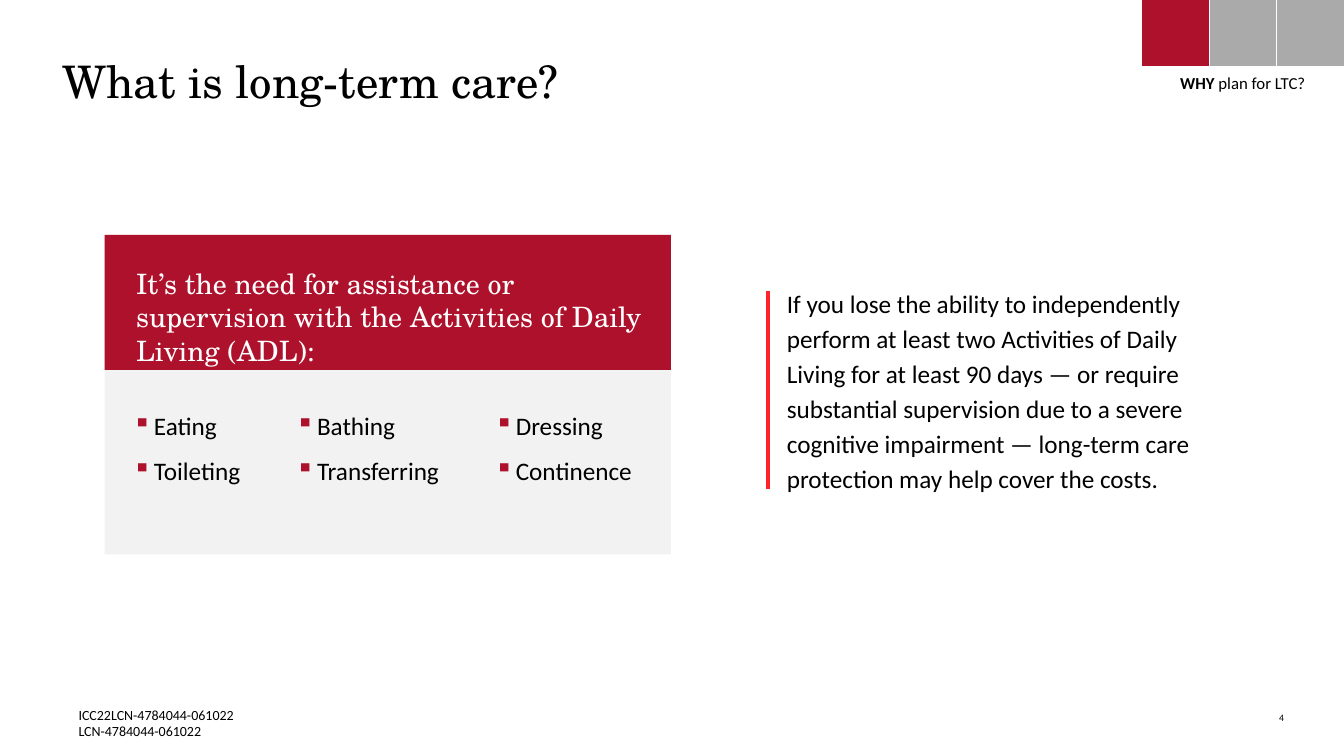
"""Builds the slide that explains what long-term care is."""
from dataclasses import dataclass

from lxml import etree
from pptx import Presentation
from pptx.dml.color import RGBColor
from pptx.enum.shapes import MSO_CONNECTOR, MSO_SHAPE
from pptx.enum.text import MSO_ANCHOR, PP_ALIGN
from pptx.oxml.ns import qn
from pptx.util import Cm, Pt

RECT = MSO_SHAPE.RECTANGLE
STRAIGHT = MSO_CONNECTOR.STRAIGHT
TOP, BOTTOM = MSO_ANCHOR.TOP, MSO_ANCHOR.BOTTOM
LEFT, CENTER, RIGHT = PP_ALIGN.LEFT, PP_ALIGN.CENTER, PP_ALIGN.RIGHT


@dataclass(frozen=True)
class Theme:
    serif: str = "TeX Gyre Schola"
    sans: str = "Calibri"
    black: str = "000000"
    white: str = "FFFFFF"
    crimson: str = "AD112B"
    red: str = "FF232A"
    grey: str = "AAAAAA"
    panel: str = "F2F2F2"
    title: int = 32
    heading: int = 20
    body: int = 18
    label: int = 12
    footer: int = 10
    number: int = 7


theme = Theme()
prs = Presentation()
prs.slide_width, prs.slide_height = Cm(33.87), Cm(19.05)
s = prs.slides.add_slide(prs.slide_layouts[6])


def add_text(text, box, size, font=theme.sans, color=theme.black, lead="",
             align=LEFT, anchor=TOP, spacing=None, inset=True, wrap=True, bullet=None):
    """Add a text box with one paragraph per line of text."""
    tf = s.shapes.add_textbox(*map(Cm, box)).text_frame
    tf.word_wrap = wrap
    tf.vertical_anchor = anchor
    if not inset:
        tf.margin_left = tf.margin_right = tf.margin_top = tf.margin_bottom = 0
    for i, line in enumerate(text.split("\n")):
        p = tf.add_paragraph() if i else tf.paragraphs[0]
        p.alignment = align
        if spacing:
            p.line_spacing = spacing
        if bullet:
            pPr = p._p.get_or_add_pPr()
            pPr.set("marL", str(Cm(0.53)))
            pPr.set("indent", str(-Cm(0.53)))
            clr = etree.SubElement(pPr, qn("a:buClr"))
            etree.SubElement(clr, qn("a:srgbClr"), val=theme.crimson)
            etree.SubElement(pPr, qn("a:buChar"), char=bullet)
        for part, bold in ((lead, True), (line, False)):
            if part:
                r = p.add_run()
                r.text = part
                r.font.name, r.font.size, r.font.bold = font, Pt(size), bold
                r.font.color.rgb = RGBColor.from_string(color)


def add_rect(box, fill, outline=None):
    """Add a flat rectangle, outlined only when a colour is given."""
    sp = s.shapes.add_shape(RECT, *map(Cm, box))
    sp.shadow.inherit = False
    sp.fill.solid()
    sp.fill.fore_color.rgb = RGBColor.from_string(fill)
    if outline:
        sp.line.color.rgb = RGBColor.from_string(outline)
        sp.line.width = Pt(0.25)
    else:
        sp.line.fill.background()


add_text("4", (31.52, 17.93, 0.84, 0.3), theme.number, align=RIGHT, anchor=BOTTOM, inset=False)
add_text("ICC22LCN-4784044-061022\nLCN-4784044-061022", (1.98, 17.78, 4.47, 0.86),
         theme.footer, anchor=BOTTOM, inset=False)
add_text("What is long-term care?", (1.57, 1.35, 13.67, 1.45), theme.title,
         font=theme.serif, inset=False)

add_text("If you lose the ability to independently perform at least two Activities of Daily "
         "Living for at least 90 days — or require substantial supervision due to a severe "
         "cognitive impairment — long-term care protection may help cover the costs.",
         (19.58, 7.01, 10.85, 5.54), theme.body, spacing=Pt(25))
rule = s.shapes.add_connector(STRAIGHT, Cm(19.35), Cm(7.34), Cm(19.35), Cm(12.32))
rule.line.color.rgb = RGBColor.from_string(theme.red)
rule.line.width = Pt(3)
etree.SubElement(rule._element.spPr, qn("a:effectLst"))

add_rect((2.64, 5.92, 14.27, 8.05), theme.panel)
add_rect((2.64, 5.92, 14.27, 3.4), theme.crimson)
add_text("It’s the need for assistance or supervision with the Activities of Daily Living (ADL):",
         (3.18, 6.58, 13.41, 1.96), theme.heading, font=theme.serif, color=theme.white)

activities = [
    (3.1, 3.28, "Eating\nToileting"),
    (7.21, 4.17, "Bathing\nTransferring"),
    (12.22, 4.14, "Dressing\nContinence"),
]
for left, width, names in activities:
    add_text(names, (left, 9.83, width, 2.44), theme.body, spacing=1.5, bullet="▪")

for i, fill in enumerate((theme.crimson, theme.grey, theme.grey)):
    add_rect((28.77 + 1.7 * i, -0.03, 1.7, 1.7), fill, outline=theme.white)
add_text("plan for LTC?", (28.78, 1.7, 5.08, 0.76), theme.label, lead="WHY ", align=CENTER)

prs.save("out.pptx")
